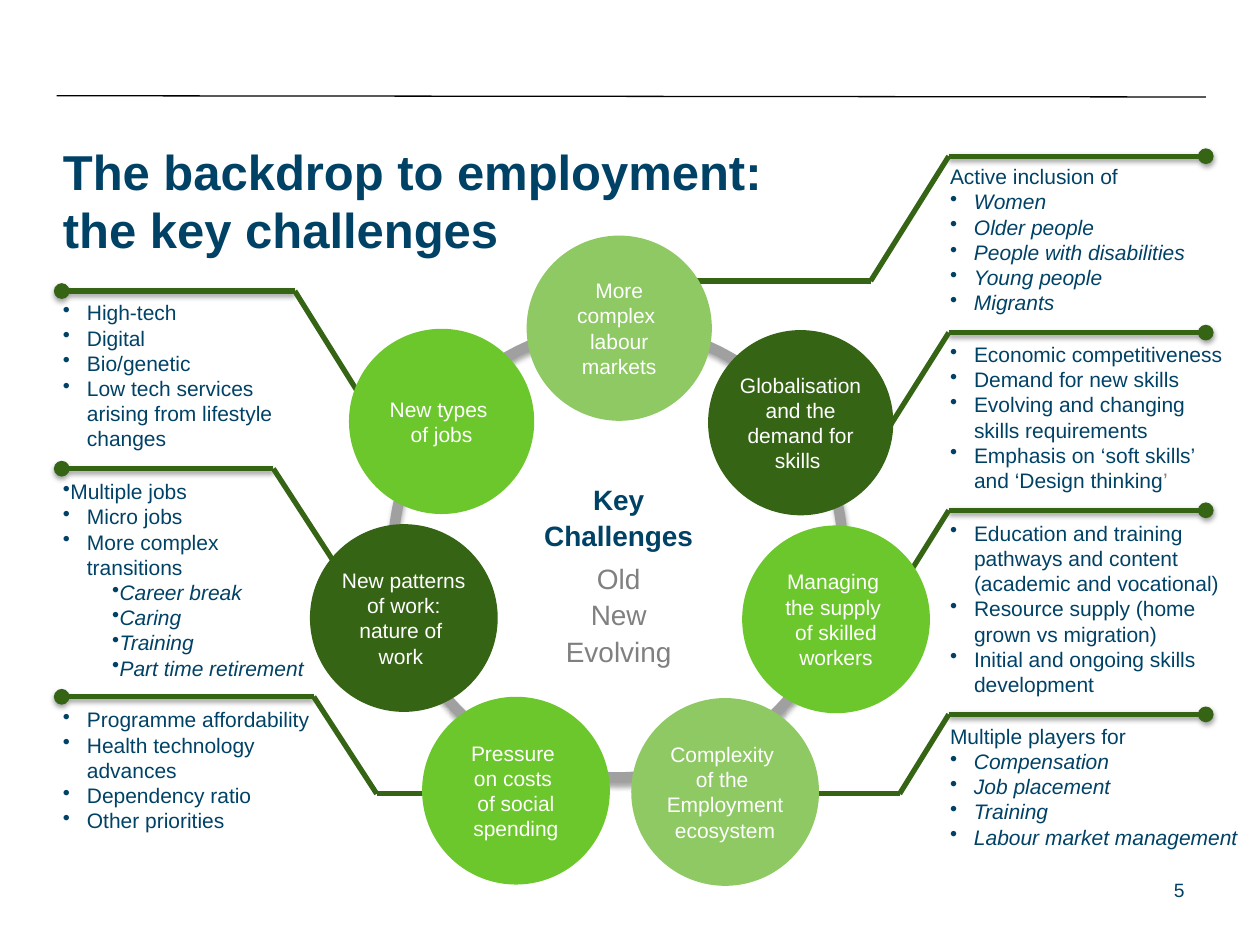
import pptx
import pptx.dml.color
import pptx.enum.shapes
import pptx.enum.text
import pptx.oxml
import pptx.oxml.ns
import pptx.util

NAVY, GREY, WHITE = "004266", "808080", "FFFFFF"
DARK, BRIGHT, PALE = "366415", "6BC72B", "8EC964"
RING = "A0A0A0"
CENTER = pptx.enum.text.PP_ALIGN.CENTER
RIGHT = pptx.enum.text.PP_ALIGN.RIGHT
OVAL = pptx.enum.shapes.MSO_SHAPE.OVAL


def color(value):
    return pptx.dml.color.RGBColor.from_string(value)


def add_xml(parent, xml):
    namespace = pptx.oxml.ns.nsdecls("a")
    parent.append(pptx.oxml.parse_xml(xml.replace(" ", f" {namespace} ", 1)))


class SlideBuilder:
    """Places elements on a grid of 100 columns by 75 rows."""

    cell = 0.1

    def __init__(self, presentation):
        self.slide = presentation.slides.add_slide(presentation.slide_layouts[6])
        self.shapes = self.slide.shapes

    def grid(self, *lengths):
        return [pptx.util.Inches(length * self.cell) for length in lengths]

    def shadow(self, shape, opacity=0, distance=1.6):
        """Adds a soft downward shadow, or an empty effect list."""
        xml = "<a:effectLst />"
        if opacity:
            blur, offset = pptx.util.Pt(3.1), pptx.util.Pt(distance)
            xml = (f'<a:effectLst ><a:outerShdw blurRad="{blur}" dist="{offset}" '
                   'dir="5400000" rotWithShape="0"><a:srgbClr val="000000">'
                   f'<a:alpha val="{opacity * 1000}"/></a:srgbClr>'
                   '</a:outerShdw></a:effectLst>')
        add_xml(shape._element.spPr, xml)

    def line(self, start, end, hex_color, width, dot=False):
        connector = self.shapes.add_connector(
            pptx.enum.shapes.MSO_CONNECTOR.STRAIGHT, *self.grid(*start, *end))
        connector.line.color.rgb = color(hex_color)
        connector.line.width = pptx.util.Pt(width)
        if dot:
            add_xml(connector.line._get_or_add_ln(), '<a:headEnd type="oval"/>')
        self.shadow(connector, 38 if dot else 0)

    def leader(self, points):
        """Joins the points, with a dot on the first one."""
        for index, (start, end) in enumerate(zip(points, points[1:])):
            self.line(start, end, DARK, 3, dot=index == 0)

    def fill_frame(self, frame, paragraphs, insets=(0, 0, 0, 0), **style):
        frame.word_wrap = True
        sides = ("margin_left", "margin_top", "margin_right", "margin_bottom")
        for side, inset in zip(sides, self.grid(*insets)):
            setattr(frame, side, inset)
        for index, (layout, *runs) in enumerate(paragraphs):
            paragraph = frame.add_paragraph() if index else frame.paragraphs[0]
            self.format_paragraph(paragraph, {**style, **layout})
            for item in runs:
                text, changes = (item, {}) if isinstance(item, str) else item
                values = {**style, **layout, **changes}
                for number, part in enumerate(text.split("\n")):
                    if number:
                        paragraph.add_line_break()
                    self.format_run(paragraph.add_run(), part, values)

    def format_paragraph(self, paragraph, values):
        for name in ("alignment", "line_spacing", "space_after", "level"):
            if name in values:
                setattr(paragraph, name, values[name])
        if "indent" in values:
            left, first = self.grid(*values["indent"])
            properties = paragraph._p.get_or_add_pPr()
            properties.set("marL", str(left))
            properties.set("indent", str(first))
            add_xml(properties, '<a:buChar char="•"/>')

    def format_run(self, run, text, values):
        run.text = text
        font = {"name": "Arial", "size": pptx.util.Pt(values.get("size", 12)),
                "bold": values.get("bold", False), "italic": values.get("italic", False)}
        for name, value in font.items():
            setattr(run.font, name, value)
        run.font.color.rgb = color(values.get("ink", NAVY))

    def text(self, box, paragraphs, **style):
        shape = self.shapes.add_textbox(*self.grid(*box))
        self.fill_frame(shape.text_frame, paragraphs, **style)

    def ring(self, box, hex_color, width):
        shape = self.shapes.add_shape(OVAL, *self.grid(*box))
        shape.fill.background()
        shape.line.color.rgb = color(hex_color)
        shape.line.width = pptx.util.Pt(width)
        self.shadow(shape, 35, 1.8)

    def circle(self, left, top, diameter, fill, *texts):
        shape = self.shapes.add_shape(OVAL, *self.grid(left, top, diameter, diameter))
        shape.shadow.inherit = False
        shape.fill.solid()
        shape.fill.fore_color.rgb = color(fill)
        shape.line.fill.background()
        shape.text_frame.vertical_anchor = pptx.enum.text.MSO_ANCHOR.MIDDLE
        self.fill_frame(shape.text_frame, [({}, text) for text in texts],
                        insets=(0, 0.5, 0, 0.5), alignment=CENTER, ink=WHITE)


PLAIN = {}
BULLET = {"indent": (1.9, -1.9)}
TIGHT = {"indent": (0.3, -1.9)}
ITALIC = {**BULLET, "italic": True}
SUB = {"indent": (2.9, 1), "level": 1, "italic": True}


def listed(layout, *texts):
    return [(layout, text) for text in texts]


LEADERS = [
    [(4.9, 55.3), (24.9, 55.3), (29.9, 63), (35, 63)],
    [(95.7, 12.4), (75.3, 12.4), (69.1, 22.3), (54.1, 22.3)],
    [(95.7, 26.4), (75.3, 26.4), (70, 34.8)],
    [(95.7, 40.5), (75.3, 40.5), (71.3, 46.9)],
    [(95.7, 56.7), (75.3, 56.7), (71.4, 63), (63.7, 63)],
    [(4.9, 23.1), (23.4, 23.1), (29.7, 33.2)],
    [(4.9, 37.2), (21.7, 37.2), (26.7, 44.9)],
]

NOTES = [
    ((5, 23.8, 19.6, 12.1), listed(
        BULLET, "High-tech", "Digital", "Bio/genetic",
        "Low tech services arising from lifestyle changes")),
    ((5, 38, 19.6, 16.2),
     listed(TIGHT, "Multiple jobs")
     + listed(BULLET, "Micro jobs", "More complex transitions")
     + listed(SUB, "Career break", "Caring", "Training", "Part time retirement")),
    ((5, 56.1, 19.6, 10.1), listed(
        BULLET, "Programme affordability", "Health technology advances",
        "Dependency ratio", "Other priorities")),
    ((75.4, 13, 19.6, 12.1),
     listed(PLAIN, "Active inclusion of")
     + listed(ITALIC, "Women", "Older people", "People with disabilities",
              "Young people", "Migrants")),
    ((75.4, 27.1, 22.2, 12.1),
     listed(BULLET, "Economic competitiveness", "Demand for new skills",
            "Evolving and changing skills requirements")
     + [(BULLET, "Emphasis on ‘soft skills’ and ‘Design thinking", ("’", {"ink": GREY}))]),
    ((75.4, 41.3, 22.2, 14.1), listed(
        BULLET, "Education and training pathways and content (academic and vocational)",
        "Resource supply (home grown vs migration)",
        "Initial and ongoing skills development")),
    ((75.4, 57.4, 23.4, 10.1),
     listed(PLAIN, "Multiple players for")
     + listed(ITALIC, "Compensation", "Job placement", "Training",
              "Labour market management")),
]

CIRCLES = [
    (41.8, 18.7, 14.7, PALE, "More complex ", "labour markets"),
    (56.2, 26.2, 14.7, DARK, "Globalisation and the demand for skills "),
    (58.9, 41.7, 14.9, BRIGHT, "Managing \nthe supply \nof skilled workers"),
    (50.1, 55.4, 14.9, PALE, "Complexity \nof the ", "Employment ecosystem"),
    (33.5, 55.3, 14.9, BRIGHT, "Pressure \non costs \nof social spending"),
    (24.6, 41.6, 14.9, DARK, "New patterns\nof work: nature of \nwork "),
    (27.7, 26.1, 14.7, BRIGHT, "New types \nof jobs"),
]


def main():
    presentation = pptx.Presentation()
    presentation.slide_width = pptx.util.Inches(10)
    presentation.slide_height = pptx.util.Inches(7.5)
    builder = SlideBuilder(presentation)

    # Header rule and leader lines
    builder.line((4.5, 7.6), (95.7, 7.7), "000000", 0.75)
    for points in LEADERS:
        builder.leader(points)

    # Title, page number and notes
    builder.text((5, 11.2, 90, 4.7),
                 listed(PLAIN, "The backdrop to employment: \nthe key challenges"),
                 size=28, bold=True)
    builder.text((71.7, 69.2, 23.3, 2.5), listed(PLAIN, "5"),
                 insets=(1, 0.5, 1, 0.5), size=11, alignment=RIGHT)
    for box, paragraphs in NOTES:
        builder.text(box, paragraphs)

    # Ring with its centre text and circles
    builder.ring((31.2, 26, 35.7, 35.7), RING, 6)
    heading = {"bold": True}
    builder.text((41.2, 37.5, 15.8, 16.2),
                 [(heading, "Key"),
                  ({**heading, "space_after": pptx.util.Pt(3)}, "Challenges")]
                 + listed({"ink": GREY}, "Old", "New", "Evolving"),
                 insets=(1, 0.5, 1, 0.5), size=16, alignment=CENTER, line_spacing=1.1)
    for circle in CIRCLES:
        builder.circle(*circle)

    presentation.save("out.pptx")


if __name__ == "__main__":
    main()
